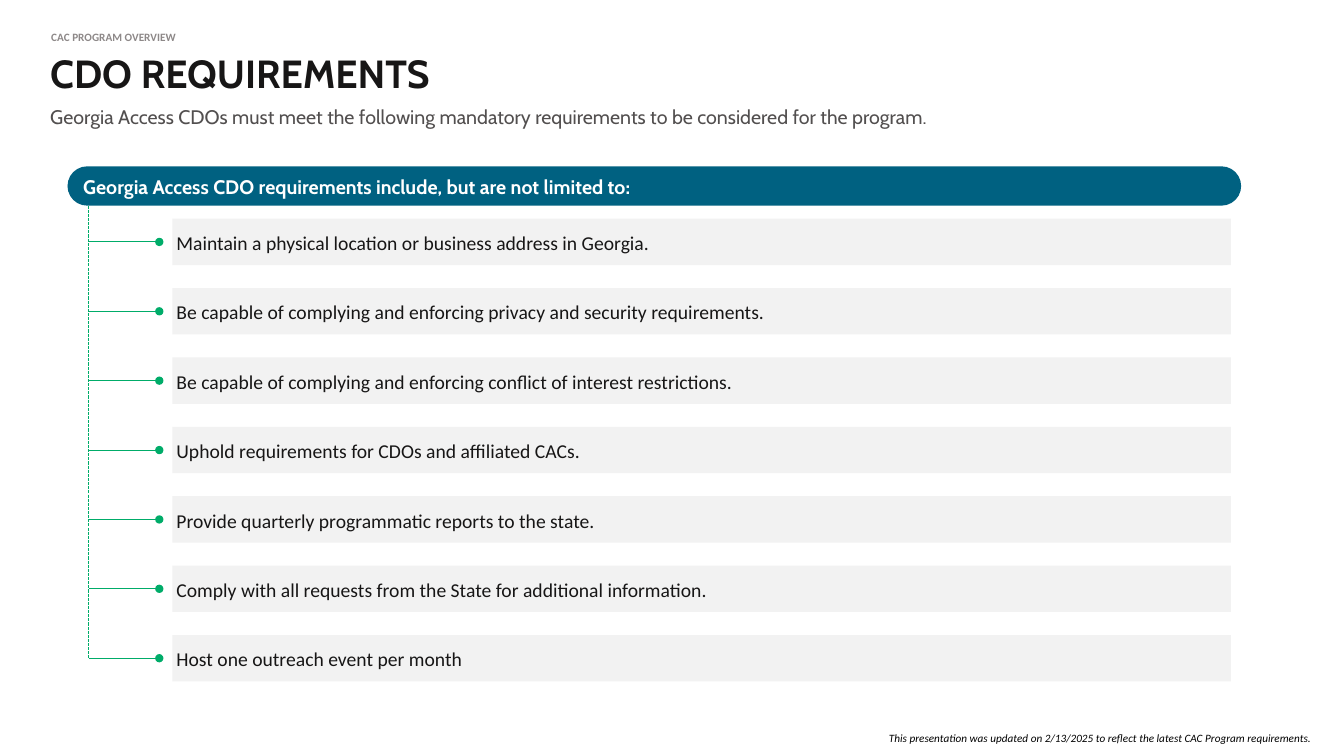
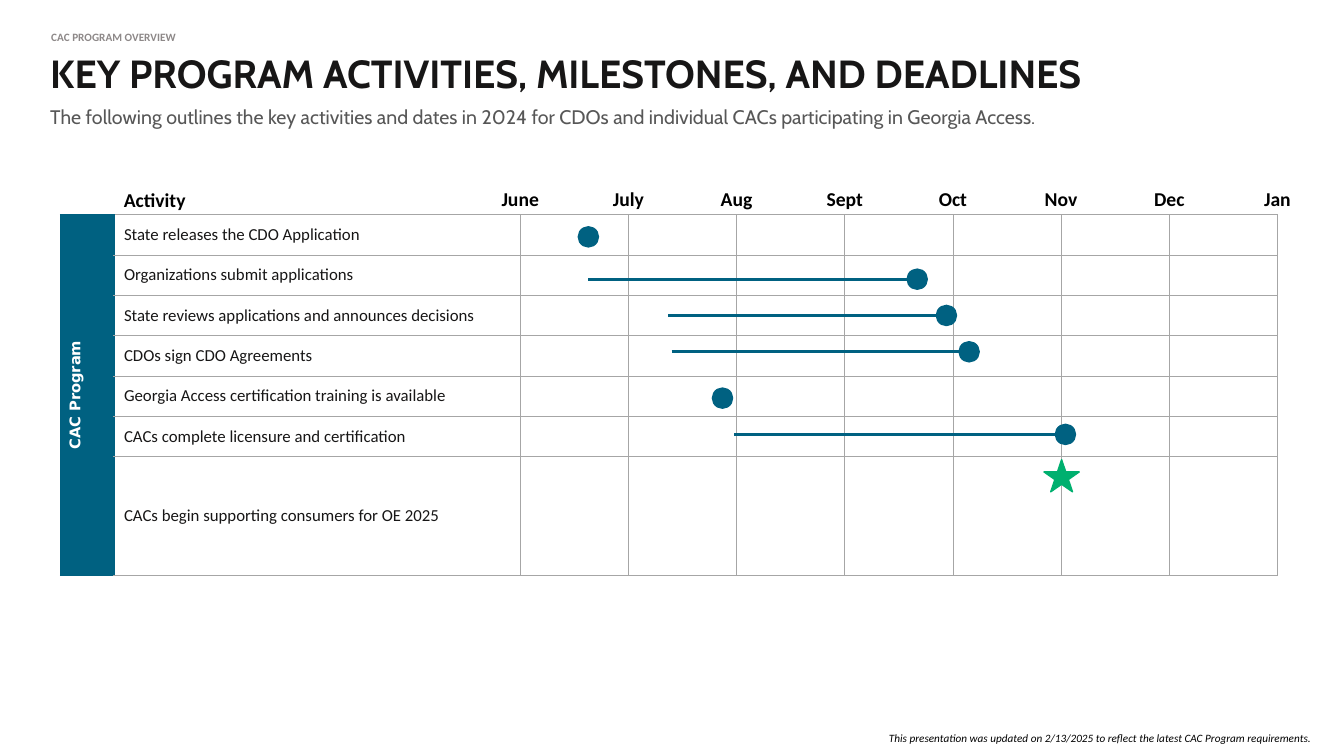
from collections import namedtuple

from lxml.etree import SubElement
from pptx import Presentation
from pptx.dml.color import RGBColor
from pptx.enum.dml import MSO_LINE
from pptx.enum.shapes import MSO_CONNECTOR, MSO_SHAPE
from pptx.enum.text import MSO_ANCHOR, PP_ALIGN
from pptx.oxml.ns import qn
from pptx.util import Inches, Pt

Box = namedtuple("Box", "x y w h")
Activity = namedtuple("Activity", "label start end drift")

PAGE = Box(0, 0, 13.33, 7.5)
COLORS = {
    "teal": "006181",
    "teal_edge": "006080",
    "green": "00AC69",
    "star": "00B06F",
    "ink": "171616",
    "black": "000000",
    "white": "FFFFFF",
    "section": "8D8888",
    "subtitle": "524F4F",
    "subtitle_light": "575757",
    "bar": "F2F2F2",
    "grid": "A6A6A6",
}
HEADING_FONT = "Cabin"
BODY_FONT = "Calibri"
SIDE_FONT = "DejaVu Sans"
SECTION = "CAC PROGRAM OVERVIEW"
FOOTER = "This presentation was updated on 2/13/2025 to reflect the latest CAC Program requirements."

REQUIREMENTS = [
    "Maintain a physical location or business address in Georgia.",
    "Be capable of complying and enforcing privacy and security requirements.",
    "Be capable of complying and enforcing conflict of interest restrictions.",
    "Uphold requirements for CDOs and affiliated CACs.",
    "Provide quarterly programmatic reports to the state.",
    "Comply with all requests from the State for additional information.",
    "Host one outreach event per month",
]
MONTHS = ["June", "July", "Aug", "Sept", "Oct", "Nov", "Dec", "Jan"]
ACTIVITIES = [
    Activity("State releases the CDO Application", None, 0.63, 0.02),
    Activity("Organizations submit applications", 0.63, 3.67, 0.04),
    Activity("State reviews applications and announces decisions", 1.37, 3.94, 0),
    Activity("CDOs sign CDO Agreements", 1.4, 4.15, -0.04),
    Activity("Georgia Access certification training is available", None, 1.87, 0.02),
    Activity("CACs complete licensure and certification", 1.98, 5.04, -0.02),
    Activity("CACs begin supporting consumers for OE 2025", None, None, 0),
]


def rgb(name):
    return RGBColor.from_string(COLORS[name])


def emu(box):
    return [Inches(length) for length in box]


def write(frame, text, size=14, font=BODY_FONT, color="ink", bold=False, italic=False,
          align=PP_ALIGN.LEFT, anchor=MSO_ANCHOR.TOP, spacing=1.0, insets=None):
    frame.word_wrap = True
    frame.vertical_anchor = anchor
    if insets is not None:
        frame.margin_left, frame.margin_top, frame.margin_right, frame.margin_bottom = (
            Inches(inset) for inset in insets)
    paragraph = frame.paragraphs[0]
    paragraph.alignment = align
    paragraph.line_spacing = spacing
    run = paragraph.add_run()
    run.text = text
    run.font.size = Pt(size)
    run.font.name = font
    run.font.bold = bold
    run.font.italic = italic
    run.font.color.rgb = rgb(color)


def add_text(slide, box, text, **style):
    write(slide.shapes.add_textbox(*emu(box)).text_frame, text, **style)


def add_block(slide, kind, box, fill, edge=None):
    block = slide.shapes.add_shape(kind, *emu(box))
    block.shadow.inherit = False
    block.fill.solid()
    block.fill.fore_color.rgb = rgb(fill)
    if edge is None:
        block.line.fill.background()
    else:
        block.line.color.rgb = rgb(fill)
        block.line.width = Pt(edge)
    return block


def add_line(slide, start, end, color, width, dash=None, head=None):
    line = slide.shapes.add_connector(MSO_CONNECTOR.STRAIGHT, *emu((*start, *end)))
    line.line.color.rgb = rgb(color)
    line.line.width = Pt(width)
    if dash:
        line.line.dash_style = dash
    if head:
        SubElement(line.line._get_or_add_ln(), qn("a:headEnd"), type=head)
    SubElement(line._element.spPr, qn("a:effectLst"))


def set_borders(cell, **edges):
    properties = cell._tc.get_or_add_tcPr()
    for side in "LRTB":
        color, width = edges.get(side, ("grid", 0.5))
        border = SubElement(properties, qn(f"a:ln{side}"), w=str(Pt(width)))
        fill = SubElement(border, qn("a:solidFill"))
        SubElement(fill, qn("a:srgbClr"), val=COLORS[color])


def paint(cell, fill):
    cell.fill.solid()
    cell.fill.fore_color.rgb = rgb(fill)


def add_frame(slide, page, title, subtitle, subtitle_color):
    left, width = page.x + page.w * 0.03, page.w * 0.92
    add_text(slide, Box(left + 0.01, 0.31, 3.77, 0.13), SECTION, size=8, color="section",
             bold=True, anchor=MSO_ANCHOR.MIDDLE, spacing=0.9)
    add_text(slide, Box(left, 0.48, width, 0.53), title, size=28, font=HEADING_FONT,
             bold=True, anchor=MSO_ANCHOR.BOTTOM, spacing=0.9)
    add_text(slide, Box(left, 1.02, width, 0.78), subtitle, font=HEADING_FONT,
             color=subtitle_color, spacing=0.9)
    add_text(slide, Box(page.w - 5.14, page.h - 0.29, 4.92, 0.24), FOOTER, size=8,
             color="black", italic=True, align=PP_ALIGN.RIGHT)


def add_requirements(slide, box, heading, requirements):
    banner_height, bar_height, first_bar = 0.39, 0.46, 0.52
    pitch = (box.h - first_bar - bar_height) / (len(requirements) - 1)
    trunk, bar_left = box.x + 0.21, box.x + 1.04

    banner = add_block(slide, MSO_SHAPE.ROUNDED_RECTANGLE,
                       Box(box.x, box.y, box.w, banner_height), "teal")
    banner.adjustments[0] = 0.5
    write(banner.text_frame, heading, font=HEADING_FONT, color="white", bold=True,
          anchor=MSO_ANCHOR.MIDDLE, spacing=1.07, insets=(0.1, 0.1, 0.1, 0.1))
    add_line(slide, (trunk, box.y + banner_height),
             (trunk, box.y + box.h - bar_height / 2), "green", 0.75, MSO_LINE.SQUARE_DOT)

    for index, requirement in enumerate(requirements):
        top = box.y + first_bar + index * pitch
        middle = top + bar_height / 2
        add_line(slide, (bar_left - 0.13, middle), (trunk, middle), "green", 0.75, head="oval")
        bar = add_block(slide, MSO_SHAPE.RECTANGLE,
                        Box(bar_left, top, 10.5, bar_height), "bar")
        write(bar.text_frame, requirement, anchor=MSO_ANCHOR.MIDDLE, spacing=1.07,
              insets=(0.04, 0, 0, 0))


def add_activity_table(slide, box, columns, rows, activities):
    table = slide.shapes.add_table(len(rows), len(columns), *emu(box)).table
    table.first_row = table.horz_banding = False
    for column, width in zip(table.columns, columns):
        column.width = Inches(width)
    for row, height in zip(table.rows, rows):
        row.height = Inches(height)

    side_edge = ("teal_edge", 1)
    for index, activity in enumerate(activities):
        side, label, *months = table.rows[index].cells
        set_borders(side, **dict.fromkeys("LRTB", side_edge))
        paint(side, "teal")
        set_borders(label, L=side_edge)
        label.fill.background()
        write(label.text_frame, activity.label, size=12)
        label.vertical_anchor = MSO_ANCHOR.MIDDLE
        for month in months:
            set_borders(month)
            paint(month, "white")
            month.margin_top = month.margin_bottom = 0

    program = table.cell(0, 0)
    program.merge(table.cell(len(rows) - 1, 0))
    write(program.text_frame, "CAC Program", size=10.5, font=SIDE_FONT, color="white",
          bold=True, align=PP_ALIGN.CENTER, spacing=1.07)
    program.text_frame.paragraphs[0].space_after = Pt(8)
    program.vertical_anchor = MSO_ANCHOR.MIDDLE
    program._tc.get_or_add_tcPr().set("vert", "vert270")


def add_schedule(slide, box, activities, months):
    side_width, label_width, row_height, dot = 0.53, 4.03, 0.4, 0.2
    first_month = box.x + side_width + label_width
    month_width = (box.w - side_width - label_width) / (len(months) - 1)
    columns = [side_width, label_width] + [month_width] * (len(months) - 1)
    short_rows = len(activities) - 1
    rows = [row_height] * short_rows + [box.h - row_height * short_rows]

    def month_x(position):
        return first_month + position * month_width

    add_activity_table(slide, box, columns, rows, activities)
    add_text(slide, Box(box.x + side_width, box.y - 0.23, 2.13, 0.17), "Activity",
             color="black", bold=True, anchor=MSO_ANCHOR.MIDDLE)
    for position, month in enumerate(months):
        add_text(slide, Box(month_x(position) - 0.47, box.y - 0.31, 0.94, 0.3), month,
                 color="black", bold=True, align=PP_ALIGN.CENTER,
                 anchor=MSO_ANCHOR.MIDDLE, insets=(0, 0, 0, 0))

    for index, activity in enumerate(activities[:-1]):
        middle = box.y + (index + 0.5) * row_height + activity.drift
        end = month_x(activity.end)
        if activity.start is not None:
            add_line(slide, (month_x(activity.start), middle), (end, middle), "teal", 2.25)
        add_block(slide, MSO_SHAPE.OVAL,
                  Box(end - dot / 2, middle - dot / 2, dot, dot), "teal", edge=1)

    launch = month_x(months.index("Nov"))
    add_block(slide, MSO_SHAPE.STAR_5_POINT,
              Box(launch - 0.17, box.y + short_rows * row_height + 0.03, 0.35, 0.32),
              "star", edge=1)


def main():
    deck = Presentation()
    deck.slide_width, deck.slide_height = Inches(PAGE.w), Inches(PAGE.h)
    blank = deck.slide_layouts[6]

    requirements = deck.slides.add_slide(blank)
    add_frame(requirements, PAGE, "CDO REQUIREMENTS",
              "Georgia Access CDOs must meet the following mandatory requirements "
              "to be considered for the program.", "subtitle")
    add_requirements(requirements, Box(0.67, 1.65, 11.64, 5.11),
                     "Georgia Access CDO requirements include, but are not limited to:",
                     REQUIREMENTS)

    schedule = deck.slides.add_slide(blank)
    add_frame(schedule, PAGE, "KEY PROGRAM ACTIVITIES, MILESTONES, AND DEADLINES",
              "The following outlines the key activities and dates in 2024 for CDOs "
              "and individual CACs participating in Georgia Access.", "subtitle_light")
    add_schedule(schedule, Box(0.6, 2.13, 12.07, 3.57), ACTIVITIES, MONTHS)

    deck.save("out.pptx")


if __name__ == "__main__":
    main()
